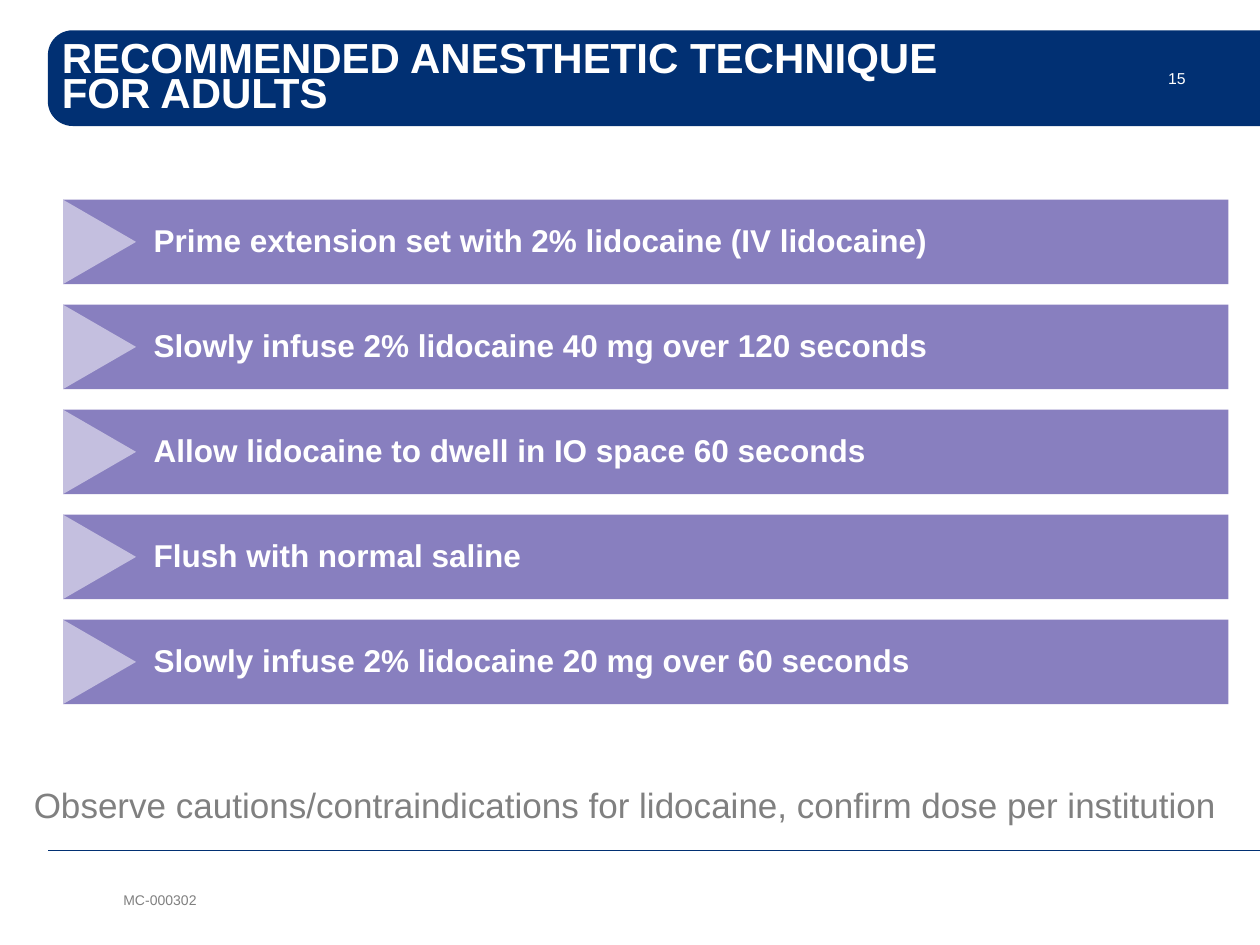
from lxml.etree import SubElement
from pptx import Presentation
from pptx.dml.color import RGBColor
from pptx.enum.shapes import MSO_CONNECTOR, MSO_SHAPE
from pptx.enum.text import MSO_ANCHOR, MSO_AUTO_SIZE, PP_ALIGN
from pptx.oxml.ns import qn
from pptx.util import Inches, Pt

COLORS = {"navy": "013073", "purple": "887FBF", "lilac": "C4BFDF",
          "white": "FFFFFF", "gray": "808080"}
STEPS = [
    "Prime extension set with 2% lidocaine (IV lidocaine)",
    "Slowly infuse 2% lidocaine 40 mg over 120 seconds",
    "Allow lidocaine to dwell in IO space 60 seconds",
    "Flush with normal saline",
    "Slowly infuse 2% lidocaine 20 mg over 60 seconds",
]


def add_filled(kind, center_x, center_y, width, height, color, rotation=0):
    """Add a flat preset shape by its center, in inches, before rotation."""
    shape = slide.shapes.add_shape(
        kind, Inches(center_x - width / 2), Inches(center_y - height / 2),
        Inches(width), Inches(height))
    shape.rotation = rotation
    shape.shadow.inherit = False
    shape.fill.solid()
    shape.fill.fore_color.rgb = RGBColor.from_string(COLORS[color])
    shape.line.fill.background()
    return shape


def write(shape, text, size, color, bold=False, align=PP_ALIGN.LEFT,
          anchor=MSO_ANCHOR.MIDDLE):
    """Fill a shape with one paragraph and return that paragraph."""
    frame = shape.text_frame
    frame.text = text
    frame.word_wrap = True
    frame.auto_size = MSO_AUTO_SIZE.NONE
    frame.vertical_anchor = anchor
    paragraph = frame.paragraphs[0]
    paragraph.alignment = align
    for run in paragraph.runs:
        run.font.name = "Arial"
        run.font.size = Pt(size)
        run.font.bold = bold
        run.font.color.rgb = RGBColor.from_string(COLORS[color])
    return paragraph


presentation = Presentation()
presentation.slide_width, presentation.slide_height = Inches(10), Inches(7.5)
slide = presentation.slides.add_slide(presentation.slide_layouts[5])

# Header band, rounded on its left side and running off to the right edge
band_left, band_top, band_height = 0.38, 0.24, 0.76
band_width = 10 - band_left
band = add_filled(MSO_SHAPE.ROUND_2_SAME_RECTANGLE, band_left + band_width / 2,
                  band_top + band_height / 2, band_height, band_width, "navy", 270)
band.adjustments[0] = 0.259
band.adjustments[1] = 0

rule = slide.shapes.add_connector(
    MSO_CONNECTOR.STRAIGHT, Inches(10), Inches(6.75), Inches(band_left), Inches(6.75))
rule.line.color.rgb = RGBColor.from_string(COLORS["navy"])
rule.line.width = Pt(0.75)
SubElement(rule._element.spPr, qn("a:effectLst"))

number = slide.shapes.add_textbox(
    Inches(9.08), Inches(band_top), Inches(0.33), Inches(band_height))
write(number, "15", 9, "white", align=PP_ALIGN.RIGHT)
frame = number.text_frame
frame.margin_left = frame.margin_right = frame.margin_top = frame.margin_bottom = 0

footer = slide.shapes.add_textbox(Inches(0.88), Inches(7.03), Inches(1.42), Inches(0.24))
write(footer, "MC-000302", 8, "gray", anchor=MSO_ANCHOR.TOP)

title = slide.shapes.title
title.left, title.top = Inches(0.39), Inches(0.28)
title.width, title.height = Inches(9.38), Inches(0.74)
heading = write(title, "RECOMMENDED ANESTHETIC TECHNIQUE \vFOR ADULTS", 24, "white", bold=True)
heading.line_spacing = Pt(20)
slide.shapes._spTree.append(title._element)  # in front of the band

caution = slide.shapes.add_textbox(Inches(0.17), Inches(6.17), Inches(9.83), Inches(0.58))
note = write(caution, "Observe cautions/contraindications for lidocaine, confirm dose per institution",
             20, "gray", anchor=MSO_ANCHOR.TOP)
note.space_after = Pt(6)

# Step bars, each with an arrowhead at its left end
bar_left, bar_width, bar_height = 0.5, 9.25, 0.67
first_center, pitch = 1.92, 2.5 / 3
arrow_depth = 0.58
for index, step in enumerate(STEPS):
    center_y = first_center + index * pitch
    bar = add_filled(MSO_SHAPE.RECTANGLE, bar_left + bar_width / 2, center_y,
                     bar_width, bar_height, "purple")
    paragraph = write(bar, step, 18, "white", bold=True)
    paragraph.line_spacing = 0.9
    bar.text_frame.margin_left = Inches(0.72)
    add_filled(MSO_SHAPE.ISOSCELES_TRIANGLE, bar_left + arrow_depth / 2, center_y,
               bar_height, arrow_depth, "lilac", 90)

presentation.save("out.pptx")
